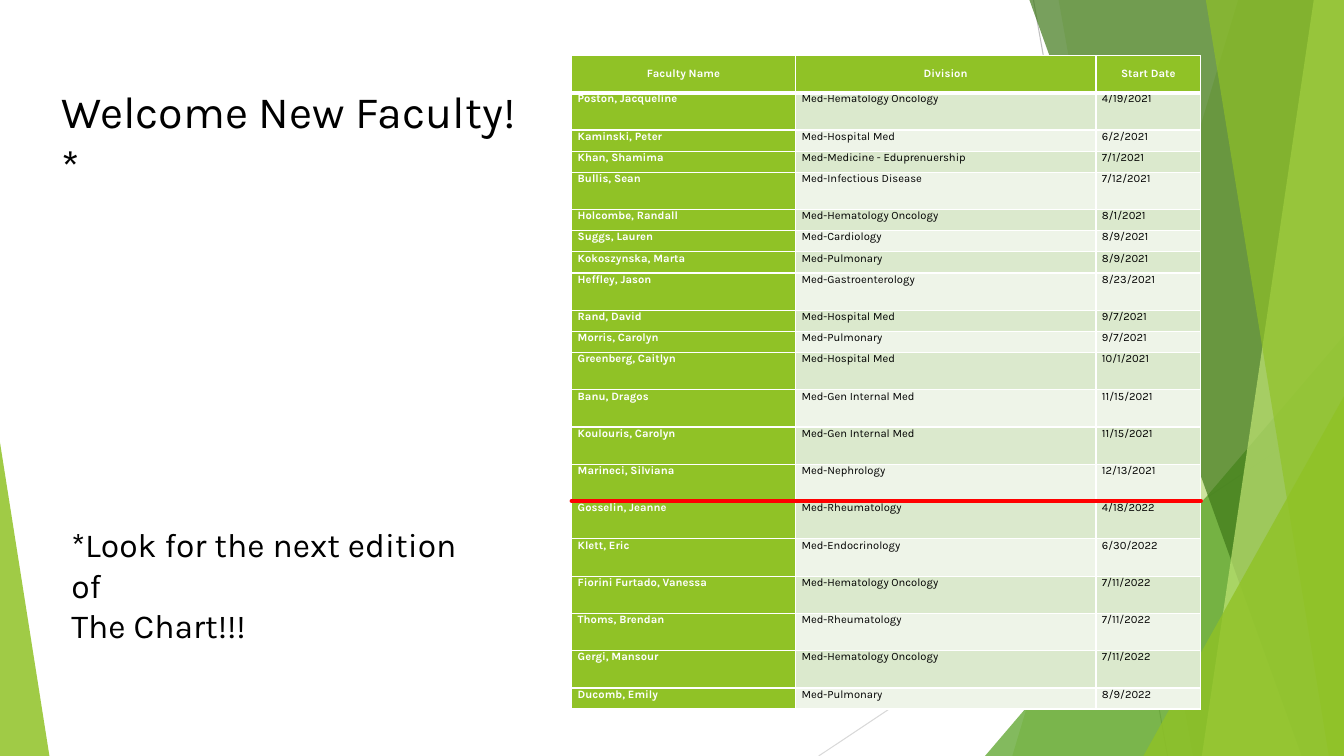
from dataclasses import dataclass

from lxml.etree import SubElement
from pptx import Presentation
from pptx.dml.color import RGBColor
from pptx.enum.shapes import MSO_CONNECTOR as CONN, MSO_SHAPE as SHAPE
from pptx.enum.text import MSO_ANCHOR as ANCHOR, MSO_AUTO_SIZE as AUTOSIZE, PP_ALIGN as ALIGN
from pptx.oxml.ns import qn
from pptx.util import Inches, Pt


@dataclass(frozen=True)
class Theme:
    font: str = "Karla"
    title: int = 32
    note: int = 24
    cell: int = 8
    black: str = "000000"
    white: str = "FFFFFF"
    green: str = "90C226"
    leaf: str = "54A021"
    forest: str = "3F7819"
    lime: str = "C0E474"
    band_dark: str = "DBE9CD"
    band_light: str = "EEF4E8"
    grey: str = "BFBFBF"
    pale_grey: str = "D9D9D9"
    red: str = "FF0000"


T = Theme()
W, H = 13.33, 7.5

HEADERS = ("Faculty Name", "Division", "Start Date")
COLUMNS = (2.22, 2.98, 1.04)
TALL, SHORT = 0.37, 0.21
# Name, division, start date, row height
FACULTY = [
    ("Poston, Jacqueline", "Med-Hematology Oncology", "4/19/2021", TALL),
    ("Kaminski, Peter", "Med-Hospital Med", "6/2/2021", SHORT),
    ("Khan, Shamima", "Med-Medicine - Eduprenuership", "7/1/2021", SHORT),
    ("Bullis, Sean", "Med-Infectious Disease", "7/12/2021", TALL),
    ("Holcombe, Randall", "Med-Hematology Oncology", "8/1/2021", SHORT),
    ("Suggs, Lauren", "Med-Cardiology", "8/9/2021", SHORT),
    ("Kokoszynska, Marta", "Med-Pulmonary", "8/9/2021", SHORT),
    ("Heffley, Jason", "Med-Gastroenterology", "8/23/2021", TALL),
    ("Rand, David", "Med-Hospital Med", "9/7/2021", SHORT),
    ("Morris, Carolyn", "Med-Pulmonary", "9/7/2021", SHORT),
    ("Greenberg, Caitlyn", "Med-Hospital Med", "10/1/2021", TALL),
    ("Banu, Dragos", "Med-Gen Internal Med", "11/15/2021", TALL),
    ("Koulouris, Carolyn", "Med-Gen Internal Med", "11/15/2021", TALL),
    ("Marineci, Silviana", "Med-Nephrology", "12/13/2021", TALL),
    ("Gosselin, Jeanne", "Med-Rheumatology", "4/18/2022", TALL),
    ("Klett, Eric", "Med-Endocrinology", "6/30/2022", TALL),
    ("Fiorini Furtado, Vanessa", "Med-Hematology Oncology", "7/11/2022", TALL),
    ("Thoms, Brendan", "Med-Rheumatology", "7/11/2022", TALL),
    ("Gergi, Mansour", "Med-Hematology Oncology", "7/11/2022", TALL),
    ("Ducomb, Emily", "Med-Pulmonary", "8/9/2022", SHORT),
]


def rgb(color):
    return RGBColor.from_string(color)


def style(p, size, color, bold=False, align=ALIGN.LEFT):
    p.alignment = align
    f = p.font
    f.name, f.size, f.bold = T.font, Pt(size), bold
    f.color.rgb = rgb(color)


def paint(sp, color, opacity):
    sp.shadow.inherit = False
    sp.line.fill.background()
    sp.fill.solid()
    sp.fill.fore_color.rgb = rgb(color)
    clr = sp.fill._xPr.find(".//" + qn("a:srgbClr"))
    SubElement(clr, qn("a:alpha"), val=str(opacity * 1000))


def add_line(s, x1, y1, x2, y2, color, width):
    cx = s.shapes.add_connector(CONN.STRAIGHT, *map(Inches, (x1, y1, x2, y2)))
    cx.line.color.rgb = rgb(color)
    cx.line.width = Pt(width)
    SubElement(cx._element.spPr, qn("a:effectLst"))
    return cx


def add_facet(s, top_x, bottom_x, color, opacity):
    """Full-height panel from a slanted left edge to the right slide edge."""
    fb = s.shapes.build_freeform(Inches(top_x), 0)
    fb.add_line_segments([(Inches(x), Inches(y)) for x, y in
                          ((W, 0), (W, H), (bottom_x, H))], close=True)
    paint(fb.convert_to_shape(), color, opacity)


def add_corner(s, x, y, w, apex, color, opacity):
    """Right-angled triangle standing on the bottom slide edge."""
    sp = s.shapes.add_shape(SHAPE.ISOSCELES_TRIANGLE, *map(Inches, (x, y, w, H - y)))
    sp.adjustments[0] = apex
    paint(sp, color, opacity)


def add_backdrop(s):
    add_line(s, 10.25, 0, 11.58, H, T.grey, 0.75)
    add_line(s, W, 4.03, 8.12, H, T.pale_grey, 0.75)
    add_facet(s, 12.28, 10.04, T.green, 30)
    add_facet(s, 10.5, 11.83, T.green, 20)
    add_corner(s, 9.77, 3.33, 3.56, 1, T.leaf, 72)
    add_facet(s, 10.21, 12.91, T.forest, 70)
    add_facet(s, 13.03, 11.92, T.lime, 70)
    add_facet(s, 11.96, 13.18, T.green, 65)
    add_corner(s, 11.34, 3.93, 1.99, 1, T.green, 80)
    add_corner(s, 0, 4.39, 0.49, 0, T.green, 85)


def set_borders(cell, top, bottom):
    tc_pr = cell._tc.get_or_add_tcPr()
    for side, width in (("L", 1), ("R", 1), ("T", top), ("B", bottom)):
        ln = SubElement(tc_pr, qn("a:ln" + side), w=str(Pt(width)))
        SubElement(SubElement(ln, qn("a:solidFill")), qn("a:srgbClr"), val=T.white)


def fill_cell(cell, text, row, col):
    header = row == 0
    accent = header or col == 0
    set_borders(cell, top=3 if row == 1 else 1, bottom=3 if header else 1)
    cell.fill.solid()
    band = T.band_dark if row % 2 else T.band_light
    cell.fill.fore_color.rgb = rgb(T.green if accent else band)
    cell.margin_left = cell.margin_right = Inches(0.06)
    cell.margin_top = cell.margin_bottom = 0
    cell.vertical_anchor = ANCHOR.MIDDLE if header else ANCHOR.TOP
    cell.text = text
    style(cell.text_frame.paragraphs[0], T.cell, T.white if accent else T.black,
          accent, ALIGN.CENTER if header else ALIGN.LEFT)


def add_faculty_table(s, x, y):
    rows = [(*HEADERS, TALL), *FACULTY]
    w, h = sum(COLUMNS), sum(r[-1] for r in rows)
    tbl = s.shapes.add_table(len(rows), len(COLUMNS), *map(Inches, (x, y, w, h))).table
    tbl.horz_banding = False
    for col, width in zip(tbl.columns, COLUMNS):
        col.width = Inches(width)
    for i, (*texts, height) in enumerate(rows):
        tbl.rows[i].height = Inches(height)
        for j, text in enumerate(texts):
            fill_cell(tbl.cell(i, j), text, i, j)
    # Red divider between the two years
    divider = add_line(s, x, 4.97, x + w, 4.97, T.red, 3)
    divider.line._get_or_add_ln().set("cap", "rnd")


def place_text(sp, box, lines, size):
    sp.left, sp.top, sp.width, sp.height = map(Inches, box)
    tf = sp.text_frame
    tf.text = "\n".join(lines)
    tf.word_wrap, tf.auto_size = True, AUTOSIZE.NONE
    tf.vertical_anchor = ANCHOR.TOP
    for p in tf.paragraphs:
        style(p, size, T.black)


def add_welcome_slide(prs):
    s = prs.slides.add_slide(prs.slide_layouts[5])
    add_backdrop(s)
    add_faculty_table(s, 5.67, 0.55)
    # Title and note on the left
    place_text(s.shapes.title, (0.51, 0.78, 4.72, 0.64),
               ["Welcome New Faculty! *"], T.title)
    place_text(s.shapes.add_textbox(0, 0, 0, 0), (0.61, 5.15, 4.16, 0.91),
               ["*Look for the next edition of", "The Chart!!!"], T.note)


def main():
    prs = Presentation()
    prs.slide_width, prs.slide_height = Inches(W), Inches(H)
    add_welcome_slide(prs)
    prs.save("out.pptx")


if __name__ == "__main__":
    main()
